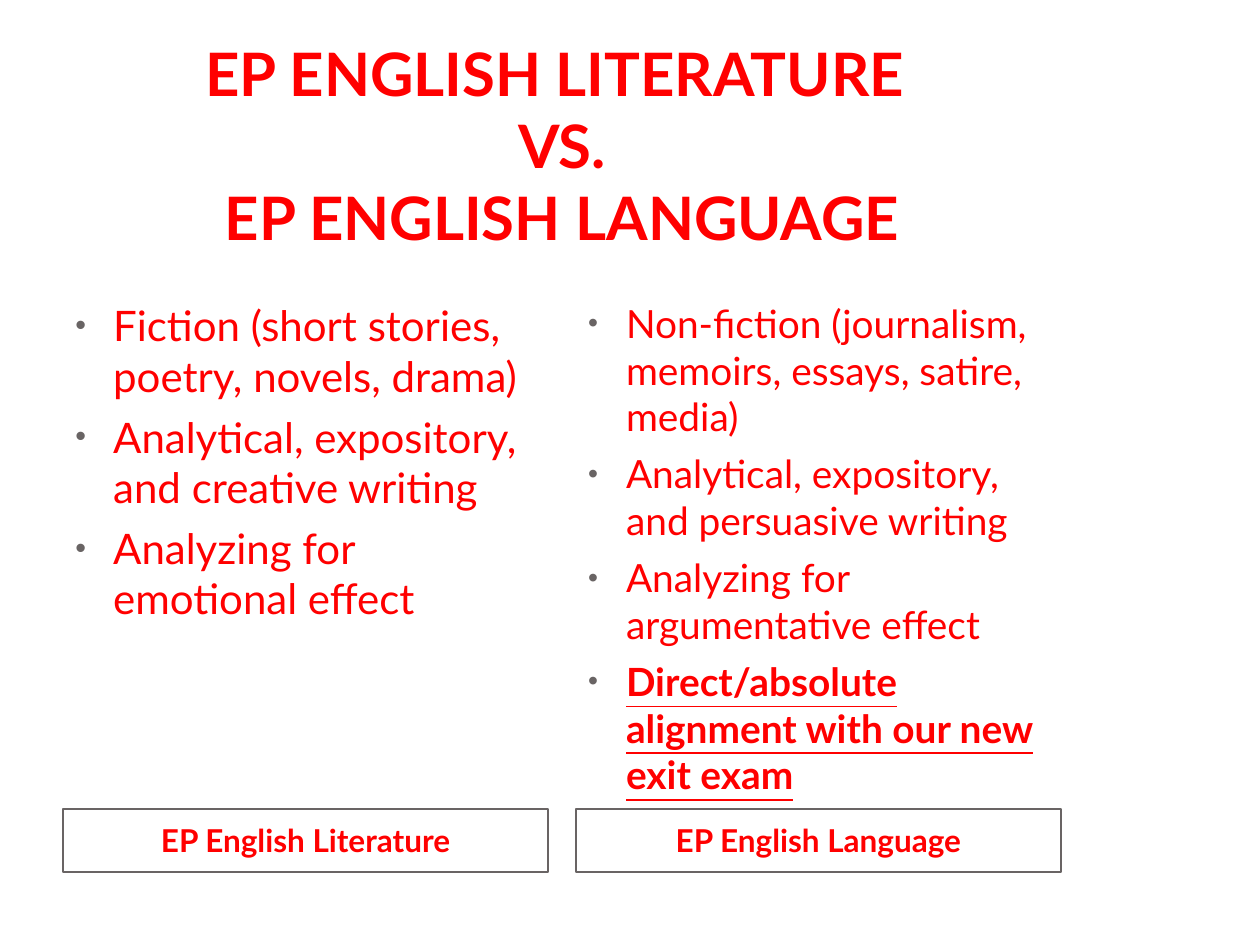
from dataclasses import dataclass
from lxml.etree import SubElement as Sub
from pptx import Presentation as Deck
from pptx.dml.color import RGBColor as Rgb
from pptx.enum.shapes import MSO_SHAPE as Form
from pptx.enum.text import MSO_ANCHOR as Anchor, PP_ALIGN as Align
from pptx.oxml.ns import qn
from pptx.util import Inches, Pt


@dataclass(frozen=True)
class Theme:
    font: str = "Lato"
    red: str = "FF0000"
    gray: str = "696464"
    white: str = "FFFFFF"
    title: float = 34.2
    label: float = 18
    left: float = 24
    right: float = 22.2
    gap: float = 6
    dent: float = 0.3
    dot: int = 73


class Page:
    def __init__(self, slide, theme):
        self.slide = slide
        self.theme = theme
        fill = slide.background.fill
        fill.solid()
        fill.fore_color.rgb = Rgb.from_string(theme.white)

    def run(self, para, text, size, bold=False, line=False):
        run = para.add_run()
        run.text = text
        font = run.font
        font.name = self.theme.font
        font.size = Pt(size)
        font.bold = bold
        font.underline = line
        font.color.rgb = Rgb.from_string(self.theme.red)

    def box(self, x, y, w, h):
        area = Inches(x), Inches(y), Inches(w), Inches(h)
        frame = self.slide.shapes.add_textbox(*area).text_frame
        frame.word_wrap = True
        return frame

    def title(self, lines, x, y, w, h):
        frame = self.box(x, y, w, h)
        frame.vertical_anchor = Anchor.BOTTOM
        frame.margin_left = frame.margin_right = Inches(0.05)
        frame.margin_top = frame.margin_bottom = 0
        para = frame.paragraphs[0]
        para.alignment = Align.CENTER
        for i, text in enumerate(lines):
            if i:
                para.add_line_break()
            self.run(para, text, self.theme.title, True)

    def label(self, text, x, y, w, h):
        area = Inches(x), Inches(y), Inches(w), Inches(h)
        shape = self.slide.shapes.add_shape(Form.RECTANGLE, *area)
        shape.shadow.inherit = False
        shape.fill.background()
        shape.line.color.rgb = Rgb.from_string(self.theme.gray)
        shape.line.width = Pt(1)
        frame = shape.text_frame
        frame.word_wrap = True
        frame.vertical_anchor = Anchor.MIDDLE
        para = frame.paragraphs[0]
        para.alignment = Align.CENTER
        self.run(para, text, self.theme.label, True)

    def bullet(self, para):
        theme = self.theme
        prop = para._p.get_or_add_pPr()
        prop.set("marL", str(Inches(theme.dent)))
        prop.set("indent", str(-Inches(theme.dent)))
        tint = Sub(prop, qn("a:buClr"))
        Sub(tint, qn("a:srgbClr"), val=theme.gray)
        Sub(prop, qn("a:buSzPct"), val=str(theme.dot * 1000))
        Sub(prop, qn("a:buFont"), typeface="Arial")
        Sub(prop, qn("a:buChar"), char="•")

    def points(self, items, size, x, y, w, h):
        frame = self.box(x, y, w, h)
        for i, (text, strong) in enumerate(items):
            para = frame.add_paragraph() if i else frame.paragraphs[0]
            self.bullet(para)
            if i:
                para.space_before = Pt(self.theme.gap)
            self.run(para, text, size, strong, strong)


def main():
    deck = Deck()
    deck.slide_width, deck.slide_height = Inches(10), Inches(7.5)
    theme = Theme()
    page = Page(deck.slides.add_slide(deck.slide_layouts[6]), theme)
    edge, wide, step = 0.5, 3.85, 4.07
    page.title(
        ["EP ENGLISH LITERATURE ", "VS.", "EP ENGLISH LANGUAGE"],
        edge, 0.35, step + wide, 1.65,
    )
    sides = [
        ("EP English Literature", theme.left, [
            ("Fiction (short stories, poetry, novels, drama)", False),
            ("Analytical, expository, and creative writing", False),
            ("Analyzing for emotional effect", False),
        ]),
        ("EP English Language", theme.right, [
            ("Non-fiction (journalism, memoirs, essays, satire, media)", False),
            ("Analytical, expository, and persuasive writing", False),
            ("Analyzing for argumentative effect", False),
            ("Direct/absolute alignment with our new exit exam", True),
        ]),
    ]
    for i, (name, size, items) in enumerate(sides):
        x = edge + i * step
        page.label(name, x, 6.42, wide, 0.5)
        page.points(items, size, x, 2.33, wide, 4.04)
    deck.save("out.pptx")


if __name__ == "__main__":
    main()
